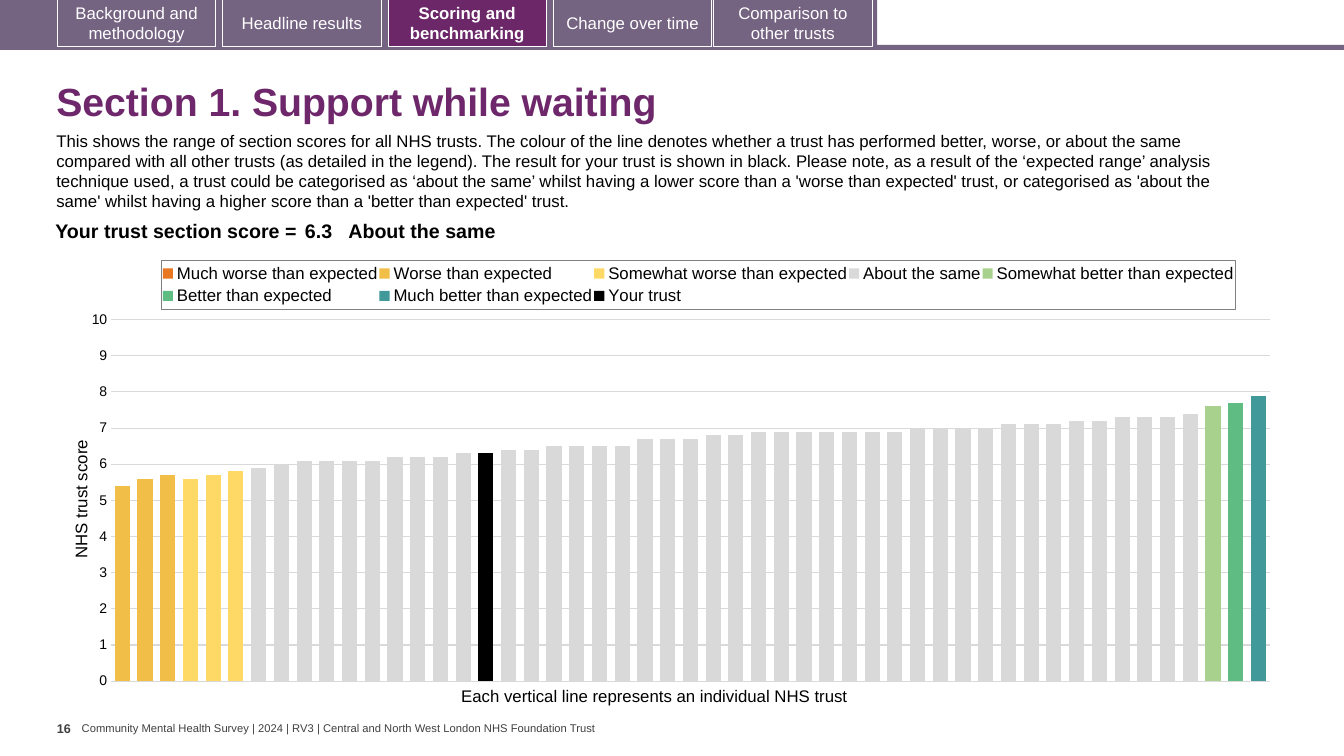
from copy import deepcopy
from dataclasses import dataclass

from lxml.etree import SubElement
from pptx import Presentation
from pptx.chart.data import CategoryChartData
from pptx.dml.color import RGBColor
from pptx.enum.chart import XL_CHART_TYPE, XL_LEGEND_POSITION, XL_TICK_MARK
from pptx.enum.shapes import MSO_SHAPE
from pptx.enum.text import MSO_ANCHOR, PP_ALIGN
from pptx.oxml import parse_xml
from pptx.oxml.ns import nsdecls, qn
from pptx.util import Inches, Pt

SLIDE_WIDTH, SLIDE_HEIGHT = Inches(13.33), Inches(7.5)
FONT = "Arial"
COLOURS = {
    "bar": "756382", "active": "6B2768", "title": "6D276A", "footer": "404040",
    "black": "000000", "white": "FFFFFF", "grid": "D9D9D9", "border": "808080",
    "much worse": "E87722", "worse": "F1BE48", "somewhat worse": "FFD966", "same": "D9D9D9",
    "somewhat better": "A9D18E", "better": "5FBD83", "much better": "419999",
}


@dataclass(frozen=True)
class Area:
    """A rectangle in percent of the slide's width and height."""
    left: float
    top: float
    width: float
    height: float

    def emu(self) -> tuple[int, int, int, int]:
        return (across(self.left), down(self.top), across(self.width), down(self.height))


@dataclass(frozen=True)
class Tab:
    label: str
    column: float
    active: bool = False


@dataclass(frozen=True)
class Band:
    """Scores of one result category, starting at a trust's rank."""
    name: str
    colour: str
    first: int = 0
    scores: tuple[float, ...] = ()


TABS = [
    Tab("Background and methodology", 0),
    Tab("Headline results", 1),
    Tab("Scoring and benchmarking", 2, active=True),
    Tab("Change over time", 3),
    Tab("Comparison to other trusts", 3.97),
]
TRUST_COUNT = 51
BANDS = [
    Band("Much worse than expected", "much worse"),
    Band("Worse than expected", "worse", 1, (5.4, 5.6, 5.7)),
    Band("Somewhat worse than expected", "somewhat worse", 4, (5.6, 5.7, 5.8)),
    Band("About the same", "same", 7, (
        5.9, 6, 6.1, 6.1, 6.1, 6.1, 6.2, 6.2, 6.2, 6.3, 6.3, 6.4, 6.4, 6.5,
        6.5, 6.5, 6.5, 6.7, 6.7, 6.7, 6.8, 6.8, 6.9, 6.9, 6.9, 6.9, 6.9, 6.9,
        6.9, 7, 7, 7, 7, 7.1, 7.1, 7.1, 7.2, 7.2, 7.3, 7.3, 7.3, 7.4)),
    Band("Somewhat better than expected", "somewhat better", 49, (7.6,)),
    Band("Better than expected", "better", 50, (7.7,)),
    Band("Much better than expected", "much better", 51, (7.9,)),
    Band("Your trust", "black", 17, (6.3,)),
]
INTRO = (
    "This shows the range of section scores for all NHS trusts. The colour of the line "
    "denotes whether a trust has performed better, worse, or about the same compared with "
    "all other trusts (as detailed in the legend). The result for your trust is shown in "
    "black. Please note, as a result of the ‘expected range’ analysis technique used, a "
    "trust could be categorised as ‘about the same’ whilst having a lower score than a "
    "'worse than expected' trust, or categorised as 'about the same' whilst having a higher "
    "score than a 'better than expected' trust."
)
FOOTER = ("Community Mental Health Survey | 2024 | RV3 | "
          "Central and North West London NHS Foundation Trust")


def across(percent: float) -> int:
    return round(SLIDE_WIDTH * percent / 100)


def down(percent: float) -> int:
    return round(SLIDE_HEIGHT * percent / 100)


def rgb(colour: str) -> RGBColor:
    return RGBColor.from_string(COLOURS[colour])


def style_font(font, size: float, colour: str = "black", bold: bool = False) -> None:
    font.name, font.size, font.bold = FONT, Pt(size), bold
    font.color.rgb = rgb(colour)


def write(frame, text: str, *, size: float = 12, colour: str = "black", bold: bool = False,
          align=PP_ALIGN.LEFT, anchor=MSO_ANCHOR.TOP, wrap: bool = True,
          margins: tuple[float, float] = (0.1, 0.05), spacing: float | None = None) -> None:
    """Fill a text frame; margins are horizontal and vertical inches."""
    frame.word_wrap, frame.vertical_anchor = wrap, anchor
    frame.margin_left = frame.margin_right = Inches(margins[0])
    frame.margin_top = frame.margin_bottom = Inches(margins[1])
    paragraph = frame.paragraphs[0]
    paragraph.alignment, paragraph.line_spacing = align, spacing
    run = paragraph.add_run()
    run.text = text
    style_font(run.font, size, colour, bold)


def add_text(slide, area: Area, text: str, **text_format) -> None:
    write(slide.shapes.add_textbox(*area.emu()).text_frame, text, **text_format)


def add_block(slide, area: Area, fill: str, outline: str | None = None):
    block = slide.shapes.add_shape(MSO_SHAPE.RECTANGLE, *area.emu())
    block.shadow.inherit = False
    block.fill.solid()
    block.fill.fore_color.rgb = rgb(fill)
    if outline:
        block.line.color.rgb, block.line.width = rgb(outline), Pt(0.75)
    else:
        block.line.fill.background()
    return block


def add_navigation(slide) -> None:
    add_block(slide, Area(0, 5.93, 100, 0.67), "bar")
    add_block(slide, Area(0, 0, 65.27, 6.27), "bar")
    for tab in TABS:
        area = Area(4.28 + 12.3 * tab.column, -0.13, 11.78, 6.27)
        block = add_block(slide, area, "active" if tab.active else "bar", "white")
        write(block.text_frame, tab.label, colour="white", bold=tab.active,
              align=PP_ALIGN.CENTER, anchor=MSO_ANCHOR.MIDDLE)


def add_score(slide) -> None:
    table = slide.shapes.add_table(1, 3, *Area(2.66, 28.67, 87.7, 2.93).emu()).table
    table.first_row = table.horz_banding = False
    columns = [("Your trust section score =", 19.73, PP_ALIGN.RIGHT, 0.04),
               ("6.3", 3.53, PP_ALIGN.LEFT, 0.04),
               ("About the same", 64.44, PP_ALIGN.LEFT, 0)]
    for index, (text, width, align, margin) in enumerate(columns):
        table.columns[index].width = across(width)
        cell = table.cell(0, index)
        cell.fill.background()
        cell.margin_left = cell.margin_right = Inches(margin)
        cell.margin_top = cell.margin_bottom = Inches(0.04)
        paragraph = cell.text_frame.paragraphs[0]
        paragraph.text, paragraph.alignment = text, align
        style_font(paragraph.runs[0].font, 14, bold=True)


def set_layout(part, index: int, inner: bool = False, **percents: float) -> None:
    """Place a chart part by percentages of the chart, as its child at index."""
    for old in part.findall(qn("c:layout")):
        part.remove(old)
    layout = parse_xml(f"<c:layout {nsdecls('c')}><c:manualLayout/></c:layout>")
    settings = {"layoutTarget": "inner"} if inner else {}
    settings |= {"xMode": "edge", "yMode": "edge"}
    settings |= {key: str(value / 100) for key, value in percents.items()}
    for key, value in settings.items():
        SubElement(layout[0], qn(f"c:{key}")).set("val", value)
    part.insert(index, layout)


def move_last_series_right(plot_area) -> None:
    """Give the last series its own columns on an unlabelled right axis."""
    left = plot_area.find(qn("c:barChart"))
    right = deepcopy(left)
    left.remove(left.findall(qn("c:ser"))[-1])
    for series in right.findall(qn("c:ser"))[:-1]:
        right.remove(series)
    left.addnext(right)
    axis_ids = ("50010", "50020")
    for reference, axis_id in zip(right.findall(qn("c:axId")), axis_ids):
        reference.set("val", axis_id)
    for tag, own, other in (("valAx", *axis_ids[::-1]), ("catAx", *axis_ids)):
        is_value = tag == "valAx"
        limits = '<c:max val="10"/><c:min val="0"/>' if is_value else ""
        plot_area.findall(qn("c:valAx"))[-1].addnext(parse_xml(
            f'<c:{tag} {nsdecls("c", "a")}><c:axId val="{own}"/>'
            f'<c:scaling><c:orientation val="minMax"/>{limits}</c:scaling>'
            f'<c:delete val="{0 if is_value else 1}"/>'
            f'<c:axPos val="{"r" if is_value else "b"}"/>'
            '<c:majorTickMark val="out"/><c:minorTickMark val="none"/>'
            '<c:tickLblPos val="none"/><c:spPr><a:ln><a:noFill/></a:ln></c:spPr>'
            f'<c:crossAx val="{other}"/>'
            f'<c:crosses val="{"max" if is_value else "autoZero"}"/></c:{tag}>'))


def add_scores_chart(slide) -> None:
    scores = CategoryChartData(number_format="0.0")
    scores.categories = [str(rank) for rank in range(1, TRUST_COUNT + 1)]
    for band in BANDS:
        ranked = dict(enumerate(band.scores, band.first))
        scores.add_series(band.name, [ranked.get(r) for r in range(1, TRUST_COUNT + 1)])
    chart = slide.shapes.add_chart(XL_CHART_TYPE.COLUMN_CLUSTERED,
                                   *Area(5.03, 32.93, 91.15, 59.2).emu(), scores).chart
    style_font(chart.font, 10)
    chart.has_title = False
    plot = chart.plots[0]
    plot.gap_width, plot.overlap, plot.vary_by_categories = 50, 100, False
    for band, series in zip(BANDS, plot.series):
        series.format.fill.solid()
        series.format.fill.fore_color.rgb = rgb(band.colour)

    chart.category_axis.visible = False
    axis = chart.value_axis
    axis.minimum_scale, axis.maximum_scale, axis.major_unit = 0, 10, 1
    axis.major_tick_mark = XL_TICK_MARK.NONE
    axis.format.line.fill.background()
    grid = axis.major_gridlines.format.line
    grid.color.rgb, grid.width = rgb("grid"), Pt(0.75)
    axis.tick_labels.number_format, axis.tick_labels.number_format_is_linked = "0", False
    style_font(axis.tick_labels.font, 10)
    caption = axis.axis_title.text_frame.paragraphs[0]
    caption.text = "NHS trust score"
    style_font(caption.runs[0].font, 12)
    plot_area = chart.element.find(".//" + qn("c:plotArea"))
    set_layout(plot_area.find(qn("c:valAx") + "/" + qn("c:title")), 1, x=0, y=42)
    set_layout(plot_area, 0, inner=True, x=3.54, y=15.8, w=94.6, h=80.8)
    move_last_series_right(plot_area)

    chart.has_legend = True
    chart.legend.position = XL_LEGEND_POSITION.TOP
    chart.legend.include_in_layout = False
    style_font(chart.legend.font, 12)
    legend = chart.element.find(".//" + qn("c:legend"))
    set_layout(legend, 1, x=7.65, y=2.5, w=87.7, h=11)
    legend.find(qn("c:overlay")).addnext(parse_xml(
        f'<c:spPr {nsdecls("c", "a")}><a:ln w="9525"><a:solidFill>'
        f'<a:srgbClr val="{COLOURS["border"]}"/></a:solidFill></a:ln></c:spPr>'))


def main() -> None:
    deck = Presentation()
    deck.slide_width, deck.slide_height = SLIDE_WIDTH, SLIDE_HEIGHT
    slide = deck.slides.add_slide(deck.slide_layouts[6])
    add_text(slide, Area(6.08, 95.47, 38.78, 1.73), FOOTER, size=8, colour="footer",
             anchor=MSO_ANCHOR.MIDDLE, wrap=False, margins=(0, 0))
    add_navigation(slide)
    add_text(slide, Area(3.45, 8.93, 93.7, 9.6), "Section 1. Support while waiting", size=28,
             colour="title", bold=True, anchor=MSO_ANCHOR.MIDDLE, spacing=0.9)
    add_text(slide, Area(3.45, 16.6, 91, 12.13), INTRO)
    add_text(slide, Area(4.23, 94.67, 1.88, 5.33), "16", size=9, colour="footer", bold=True,
             margins=(0, 0.05))
    add_text(slide, Area(33.58, 90, 30.83, 4),
             "Each vertical line represents an individual NHS trust", wrap=False)
    add_scores_chart(slide)
    add_score(slide)
    deck.save("out.pptx")


if __name__ == "__main__":
    main()
